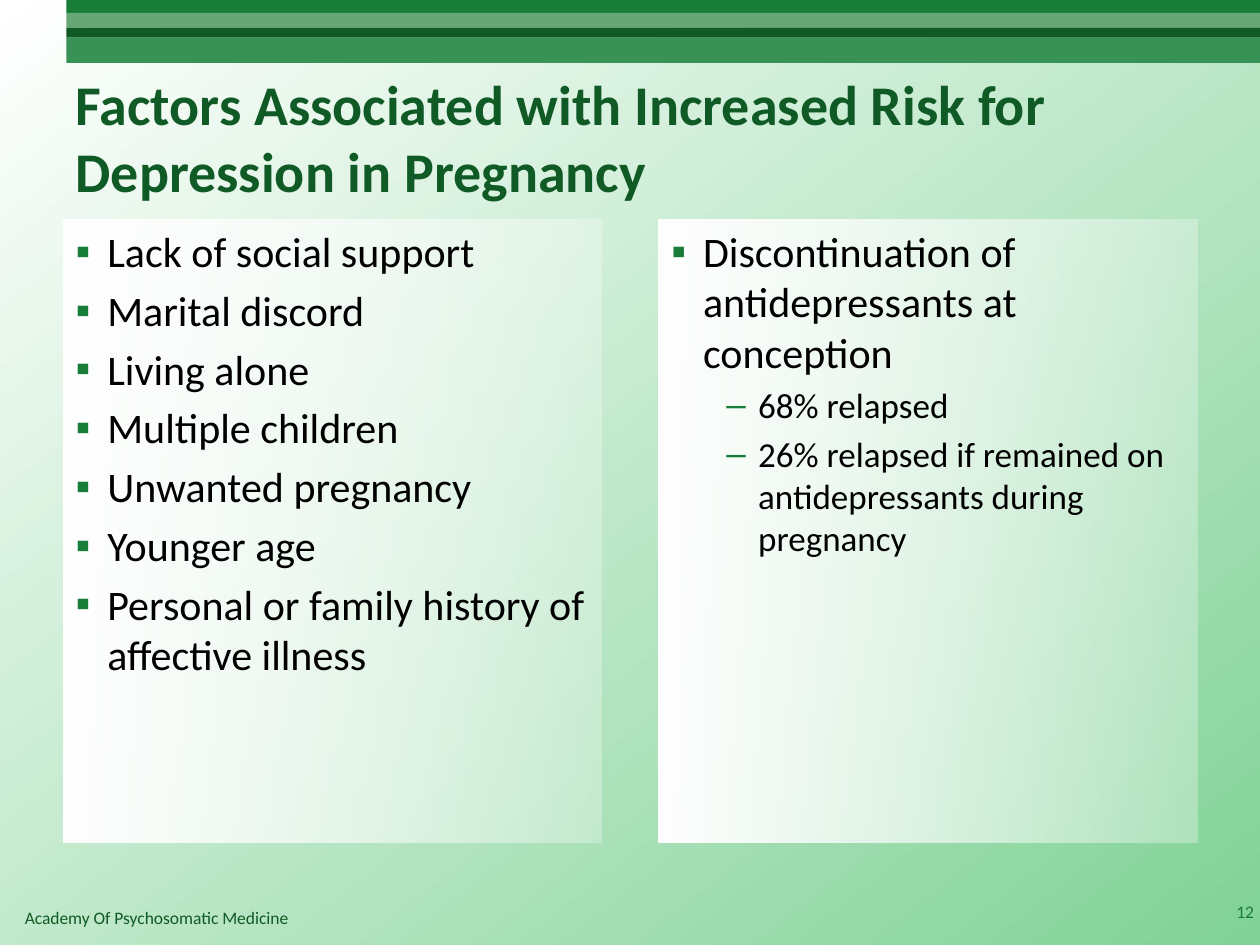
import dataclasses

import pptx
import pptx.dml.color
import pptx.enum.shapes
import pptx.enum.text
import pptx.oxml.ns
import pptx.oxml.xmlchemy
import pptx.util

Cm = pptx.util.Cm
Pt = pptx.util.Pt
Rgb = pptx.dml.color.RGBColor.from_string
Align = pptx.enum.text.PP_ALIGN
Anchor = pptx.enum.text.MSO_ANCHOR
Fit = pptx.enum.text.MSO_AUTO_SIZE
qn = pptx.oxml.ns.qn
Node = pptx.oxml.xmlchemy.OxmlElement


@dataclasses.dataclass(frozen=True)
class Theme:
    font: str = "Calibri"
    dark: str = "105A25"
    green: str = "177D38"
    pale: str = "66A677"
    mid: str = "389155"
    mint: str = "81D297"
    white: str = "FFFFFF"
    black: str = "000000"
    title: int = 32
    list: tuple = (24, 20)
    small: int = 10


THEME = Theme()

RISKS = [
    ("Lack of social support", 0),
    ("Marital discord", 0),
    ("Living alone", 0),
    ("Multiple children", 0),
    ("Unwanted pregnancy", 0),
    ("Younger age", 0),
    ("Personal or family history of affective illness", 0),
]
DRUGS = [
    ("Discontinuation of antidepressants at conception", 0),
    ("68% relapsed", 1),
    ("26% relapsed if remained on antidepressants during pregnancy", 1),
]


def place(shape, left, top, width, height):
    shape.left, shape.top = Cm(left), Cm(top)
    shape.width, shape.height = Cm(width), Cm(height)


def style(para, size, color, bold=False):
    for run in para.runs:
        run.font.name = THEME.font
        run.font.size = Pt(size)
        run.font.bold = bold
        run.font.color.rgb = Rgb(color)


def blend(fill, start, end, angle):
    fill.gradient()
    fill.gradient_angle = angle
    for stop, color, pos in zip(fill.gradient_stops, (start, end), (0, 1)):
        stop.color.rgb = Rgb(color)
        stop.position = pos


def add_bars(slide):
    group = slide.shapes.add_group_shape()
    kind = pptx.enum.shapes.MSO_SHAPE.RECTANGLE
    tops = (0, 0.26, 0.56, 0.76, 1.27)
    colors = (THEME.green, THEME.pale, THEME.dark, THEME.mid)
    for top, end, color in zip(tops, tops[1:], colors):
        bar = group.shapes.add_shape(
            kind, Cm(1.34), Cm(top), Cm(24.06), Cm(end - top))
        bar.shadow.inherit = False
        bar.fill.solid()
        bar.fill.fore_color.rgb = Rgb(color)
        bar.line.fill.background()


def add_title(slide, text):
    title = slide.shapes.title
    place(title, 1.27, 1.07, 22.86, 3.38)
    frame = title.text_frame
    frame.text = text
    frame.auto_size = Fit.NONE
    frame.vertical_anchor = Anchor.MIDDLE
    para = frame.paragraphs[0]
    para.alignment = Align.LEFT
    style(para, THEME.title, THEME.dark, True)


def add_mark(para, level):
    props = para._p.get_or_add_pPr()
    props.set("marL", str(Cm((0.64, 1.75)[level])))
    props.set("indent", str(Cm(-0.64)))
    color = Node("a:buClr")
    value = Node("a:srgbClr")
    value.set("val", THEME.green)
    color.append(value)
    mark = Node("a:buChar")
    mark.set("char", "▪–"[level])
    props.extend([color, mark])


def add_panel(body, left, items):
    place(body, left, 4.42, 10.85, 12.57)
    blend(body.fill, THEME.white, THEME.white, 0)
    alpha = Node("a:alpha")
    alpha.set("val", "30000")
    body._element.spPr.findall(".//" + qn("a:srgbClr"))[-1].append(alpha)
    frame = body.text_frame
    frame.text = "\n".join(text for text, level in items)
    frame.auto_size = Fit.NONE
    for i, (para, (text, level)) in enumerate(zip(frame.paragraphs, items)):
        size = THEME.list[level]
        para.level = level
        add_mark(para, level)
        para.space_before = Pt(size * 0.2 if i else 0)
        style(para, size, THEME.black)


def add_note(slide, text, box, color, align, anchor):
    note = slide.shapes.add_textbox(*map(Cm, box))
    frame = note.text_frame
    frame.word_wrap = True
    frame.vertical_anchor = anchor
    frame.text = text
    para = frame.paragraphs[0]
    para.alignment = align
    style(para, THEME.small, color)


def main():
    deck = pptx.Presentation()
    deck.slide_width, deck.slide_height = Cm(25.4), Cm(19.05)
    slide = deck.slides.add_slide(deck.slide_layouts[3])
    blend(slide.background.fill, THEME.white, THEME.mint, 308)
    add_bars(slide)
    add_title(slide, "Factors Associated with Increased Risk for "
                     "Depression in Pregnancy")
    add_panel(slide.placeholders[1], 1.27, RISKS)
    add_panel(slide.placeholders[2], 13.28, DRUGS)
    add_note(slide, "Academy Of Psychosomatic Medicine",
             (0.25, 18.16, 17.63, 0.69), THEME.dark, Align.LEFT, Anchor.TOP)
    add_note(slide, "12", (24.51, 17.86, 1.02, 1.02),
             THEME.green, Align.RIGHT, Anchor.MIDDLE)
    deck.save("out.pptx")


if __name__ == "__main__":
    main()
